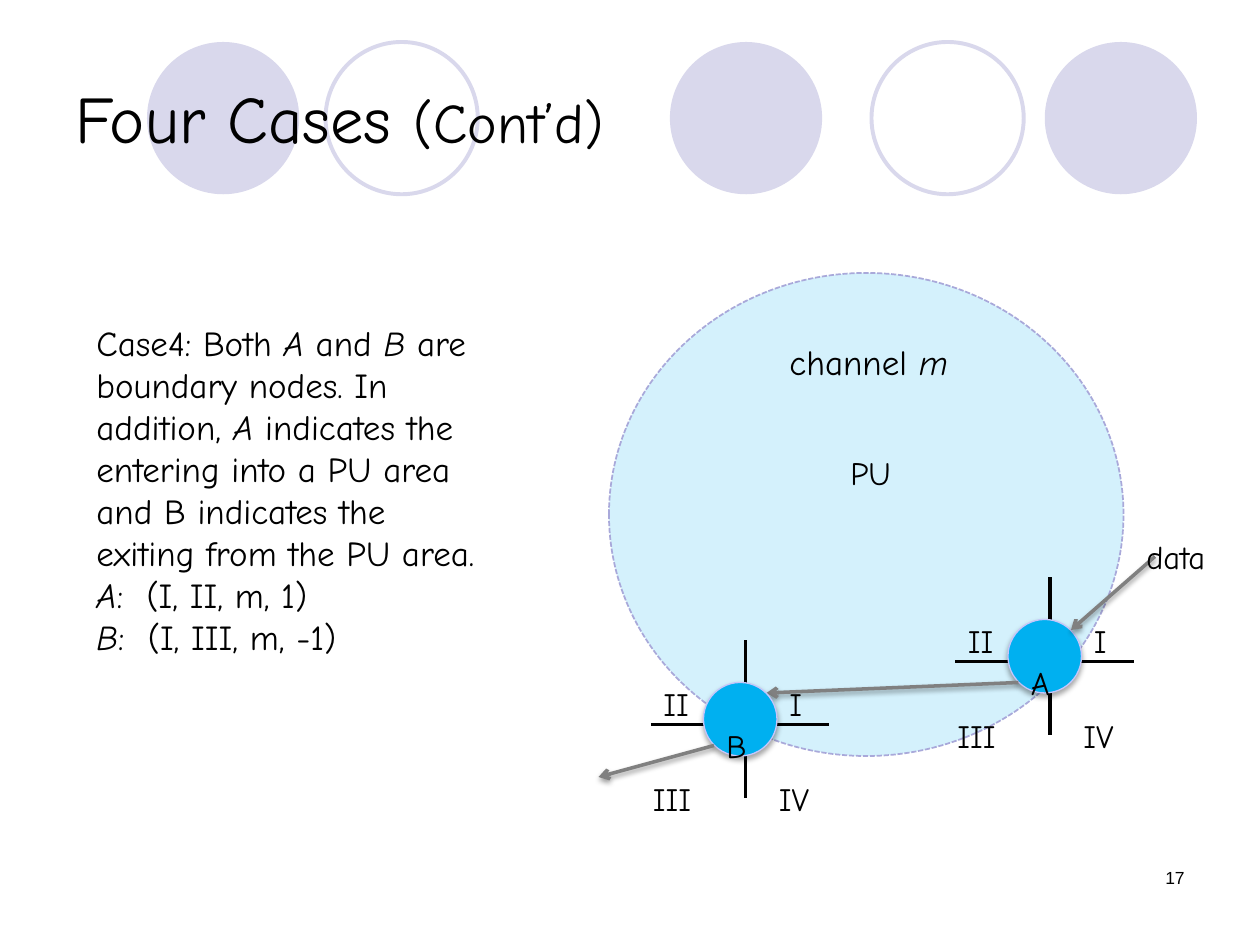
from dataclasses import dataclass

from lxml import etree
from pptx import Presentation
from pptx.dml.color import RGBColor
from pptx.enum.dml import MSO_LINE
from pptx.enum.shapes import MSO_CONNECTOR, MSO_SHAPE
from pptx.enum.text import MSO_ANCHOR, PP_ALIGN
from pptx.oxml.ns import qn
from pptx.util import Inches, Pt

STRAIGHT, OVAL, DASH = MSO_CONNECTOR.STRAIGHT, MSO_SHAPE.OVAL, MSO_LINE.SQUARE_DOT
TOP, MIDDLE = MSO_ANCHOR.TOP, MSO_ANCHOR.MIDDLE
LEFT, RIGHT = PP_ALIGN.LEFT, PP_ALIGN.RIGHT

COLORS = {"black": "000000", "lilac": "D9D8EC", "cyan": "00B0F0",
          "pu_edge": "A9A9DA", "node_edge": "C6C6FB", "gray": "808080"}
GRID = 12  # columns and rows to the inch
LABEL = {"size": 32, "baseline": -25}


@dataclass
class Node:
    name: str
    col: float
    row: float


@dataclass
class Arrow:
    start: tuple[float, float]
    end: tuple[float, float]


@dataclass
class Ring:
    col: float
    filled: bool


RINGS = [Ring(63.8, True), Ring(99.5, True), Ring(14, True),
         Ring(83, False), Ring(31, False)]
NODE_A, NODE_B = Node("A", 96, 59), Node("B", 67, 65)
DATA_IN = Arrow((110, 53), (102, 60))
A_TO_B = Arrow((97, 65), (73, 66))
DATA_OUT = Arrow((68, 71), (57, 74))
# Quadrant labels: column, row and width relative to the node
QUADRANTS = {"I": (7, -4, 5), "II": (-5, -4, 10),
             "III": (-6, 5, 10), "IV": (6, 5, 8)}

prs = Presentation()
prs.slide_width, prs.slide_height = Inches(10), Inches(7.5)
s = prs.slides.add_slide(prs.slide_layouts[6])


def grid(*cells: float) -> list[int]:
    return [Inches(c / GRID) for c in cells]


def rgb(name: str) -> RGBColor:
    return RGBColor.from_string(COLORS[name])


def add_effects(sp, alpha: int = 0, blur: float = 0, dist: float = 0) -> None:
    """Set the effect list: empty, or with one shadow that falls down."""
    effects = etree.SubElement(sp._element.spPr, qn("a:effectLst"))
    if alpha:
        shadow = etree.SubElement(effects, qn("a:outerShdw"), blurRad=str(Pt(blur)),
                                  dist=str(Pt(dist)), dir="5400000", rotWithShape="0")
        color = etree.SubElement(shadow, qn("a:srgbClr"), val=COLORS["black"])
        etree.SubElement(color, qn("a:alpha"), val=str(alpha * 1000))


def add_text(text, col: float, row: float, width: float, height: float, *,
             size: float = 20, font: str = "Comic Neue", baseline: int = 0,
             align=LEFT, anchor=TOP) -> None:
    """Text is a string, or paragraphs of (text, format) runs."""
    paragraphs = [[(text, {})]] if isinstance(text, str) else text
    tf = s.shapes.add_textbox(*grid(col, row, width, height)).text_frame
    tf.word_wrap, tf.vertical_anchor = True, anchor
    for i, runs in enumerate(paragraphs):
        p = tf.add_paragraph() if i else tf.paragraphs[0]
        p.alignment = align
        for words, style in runs:
            r = p.add_run()
            r.text = words
            r.font.name, r.font.size = font, Pt(style.get("size", size))
            r.font.italic = style.get("italic", False)
            r.font.color.rgb = rgb("black")
            if baseline:
                r._r.get_or_add_rPr().set("baseline", str(baseline * 1000))


def add_oval(col: float, row: float, width: float, height: float,
             fill: str = "", line: str = "", weight: float = 1):
    sp = s.shapes.add_shape(OVAL, *grid(col, row, width, height))
    if fill:
        sp.fill.solid()
        sp.fill.fore_color.rgb = rgb(fill)
    else:
        sp.fill.background()
    if line:
        sp.line.color.rgb, sp.line.width = rgb(line), Pt(weight)
    else:
        sp.line.fill.background()
    return sp


def add_line(start: tuple, end: tuple, color: str, weight: float):
    line = s.shapes.add_connector(STRAIGHT, *grid(*start, *end))
    line.line.color.rgb, line.line.width = rgb(color), Pt(weight)
    return line


def add_arrow(arrow: Arrow) -> None:
    line = add_line(arrow.start, arrow.end, "gray", 2)
    etree.SubElement(line.line._get_or_add_ln(), qn("a:tailEnd"), type="arrow")
    add_effects(line, 38, 3.1, 1.6)


def add_node(node: Node) -> None:
    """A node on its axes, with its name and four quadrant labels."""
    x, y = node.col, node.row
    for start, end in (((x - 5, y + 4), (x + 12, y + 4)),
                       ((x + 4, y + 11), (x + 4, y - 4))):
        add_effects(add_line(start, end, "black", 2.25))
    add_effects(add_oval(x, y, 7, 7, "cyan", "node_edge", 0.75), 35, 3.1, 1.8)
    add_text(node.name, x + 1, y, 5, 5, **LABEL)
    for name, (dx, dy, width) in QUADRANTS.items():
        add_text(name, x + dx, y + dy, width, 5, **LABEL)


# Header rings, title and page number
for ring in RINGS:
    style = {"fill": "lilac"} if ring.filled else {"line": "lilac", "weight": 2.25}
    add_oval(ring.col, 4, 14.5, 14.5, **style).shadow.inherit = False
add_text([[("Four Cases ", {}), ("(Cont’d)", {"size": 32})]],
         6, 3.6, 108, 15, size=38, anchor=MIDDLE)
add_text("17", 86, 82, 28, 6, size=10, font="Arial", align=RIGHT)

# Primary user area
area = add_oval(58, 26, 49, 46, "cyan", "pu_edge")
area.line.dash_style = DASH
area.shadow.inherit = False
area_color = area.fill._xPr.find(qn("a:solidFill"))[0]
etree.SubElement(area_color, qn("a:alpha"), val="17000")
add_text("PU", 79.8, 39, 9, 7, **LABEL)
ITALIC = {"italic": True}
add_text([[("channel ", {}), ("m", ITALIC)]], 74, 31.8, 22, 7.2)

# Case description
add_text([
    [("Case4: Both ", {}), ("A", ITALIC), (" and ", {}), ("B", ITALIC),
     (" are boundary nodes. In addition, ", {}), ("A", ITALIC),
     (" indicates the entering into a PU area and B indicates the exiting "
      "from the PU area.", {})],
    [("A", ITALIC), (":  (I, II, m, 1)", {})],
    [("B", ITALIC), (":  (I, III, m, -1)", {})],
], 8, 30, 40, 38)

# Boundary nodes and the data path through them
add_node(NODE_A)
add_arrow(DATA_IN)
add_arrow(A_TO_B)
add_text("data", 108, 47, 12, 5, **LABEL)
add_node(NODE_B)
add_arrow(DATA_OUT)

prs.save("out.pptx")
